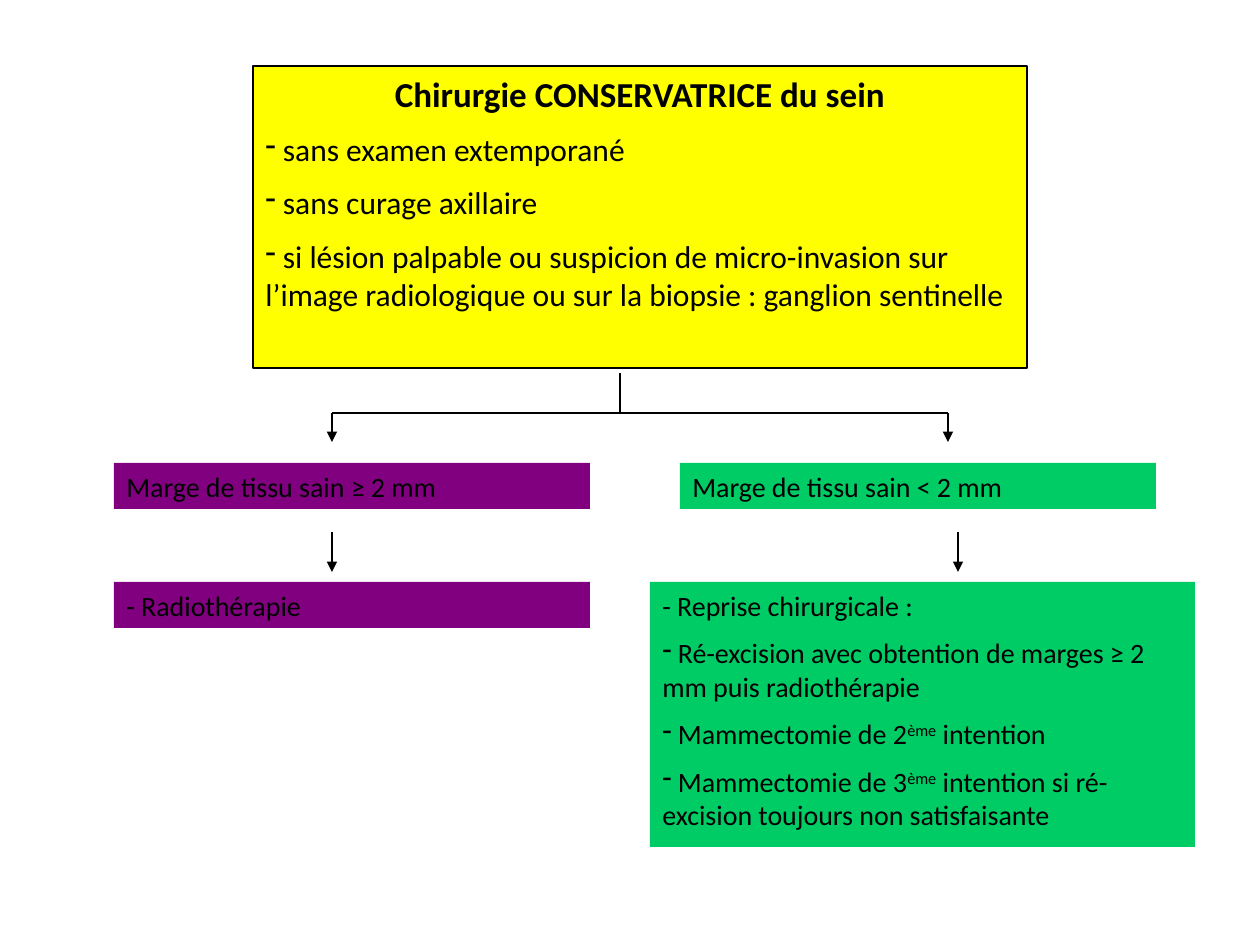
from lxml.etree import SubElement
from pptx import Presentation
from pptx.dml.color import RGBColor
from pptx.enum.shapes import MSO_CONNECTOR, MSO_SHAPE
from pptx.enum.text import MSO_ANCHOR, PP_ALIGN
from pptx.oxml.ns import qn
from pptx.util import Emu, Pt

PX = 914400 / 126
COLORS = {"black": "000000", "yellow": "FFFF00", "purple": "800080", "green": "00CC66"}


def px(length):
    return Emu(round(length * PX))


def color(name):
    return RGBColor.from_string(COLORS[name])


def add_text(para, text, size=16, bold=False, align=PP_ALIGN.LEFT, bullet=False, before=0):
    """Fill a paragraph; text between ^ marks is superscript."""
    para.alignment = align
    para.space_before = Pt(before)
    if bullet:
        properties = para._p.get_or_add_pPr()
        properties.set("marL", "0")
        properties.set("indent", "0")
        SubElement(properties, qn("a:buChar")).set("char", "-")
    for index, part in enumerate(text.split("^")):
        span = para.add_run()
        span.text = part
        span.font.name = "Calibri"
        span.font.size = Pt(size)
        span.font.bold = bold
        span.font.color.rgb = color("black")
        if index % 2:
            span.font._element.set("baseline", "30000")


def add_box(page, left, top, width, height, fill, outlined=False):
    """Draw a filled box and return its text frame."""
    box = page.shapes.add_shape(MSO_SHAPE.RECTANGLE, px(left), px(top), px(width), px(height))
    box.shadow.inherit = False
    box.fill.solid()
    box.fill.fore_color.rgb = color(fill)
    if outlined:
        box.line.color.rgb = color("black")
        box.line.width = Pt(0.75)
    else:
        box.line.fill.background()
    frame = box.text_frame
    frame.word_wrap = True
    frame.vertical_anchor = MSO_ANCHOR.TOP
    return frame


def add_items(frame, items, size):
    for item in items:
        add_text(frame.add_paragraph(), item, size=size, bullet=True, before=size / 2)


def add_line(page, start, end, arrow=False):
    line = page.shapes.add_connector(MSO_CONNECTOR.STRAIGHT, *map(px, start + end))
    line.line.color.rgb = color("black")
    line.line.width = Pt(0.75)
    if arrow:
        SubElement(line.line._get_or_add_ln(), qn("a:tailEnd")).set("type", "triangle")
    SubElement(line._element.spPr, qn("a:effectLst"))


def main():
    deck = Presentation()
    deck.slide_width, deck.slide_height = px(1260), px(945)
    page = deck.slides.add_slide(deck.slide_layouts[6])

    # Surgery
    surgery = add_box(page, 253, 66, 774, 302, "yellow", outlined=True)
    add_text(surgery.paragraphs[0], "Chirurgie CONSERVATRICE du sein",
             size=20, bold=True, align=PP_ALIGN.CENTER)
    add_items(surgery, [
        " sans examen extemporané",
        " sans curage axillaire",
        " si lésion palpable ou suspicion de micro-invasion sur l’image radiologique"
        " ou sur la biopsie : ganglion sentinelle",
    ], size=18)

    # Margins and treatments
    for left, top, width, height, fill, text, items in [
        (114, 463, 476, 46, "purple", "Marge de tissu sain ≥ 2 mm", []),
        (680, 463, 476, 46, "green", "Marge de tissu sain < 2 mm", []),
        (114, 582, 476, 46, "purple", "- Radiothérapie", []),
        (650, 582, 545, 265, "green", "- Reprise chirurgicale :", [
            " Ré-excision avec obtention de marges ≥ 2 mm puis radiothérapie",
            " Mammectomie de 2^ème^ intention",
            " Mammectomie de 3^ème^ intention si ré-excision toujours non satisfaisante",
        ]),
    ]:
        frame = add_box(page, left, top, width, height, fill)
        add_text(frame.paragraphs[0], text)
        add_items(frame, items, size=16)

    # Fork from surgery to the two margins
    fork, left_branch, right_branch = 413, 332, 948
    add_line(page, (left_branch, fork), (right_branch, fork))
    add_line(page, (620, fork), (620, 373))

    # Arrows down to margins and treatments
    for x, top, bottom in [
        (left_branch, fork, 442), (right_branch, fork, 442),
        (left_branch, 532, 572), (958, 532, 572),
    ]:
        add_line(page, (x, top), (x, bottom), arrow=True)

    deck.save("out.pptx")


if __name__ == "__main__":
    main()
